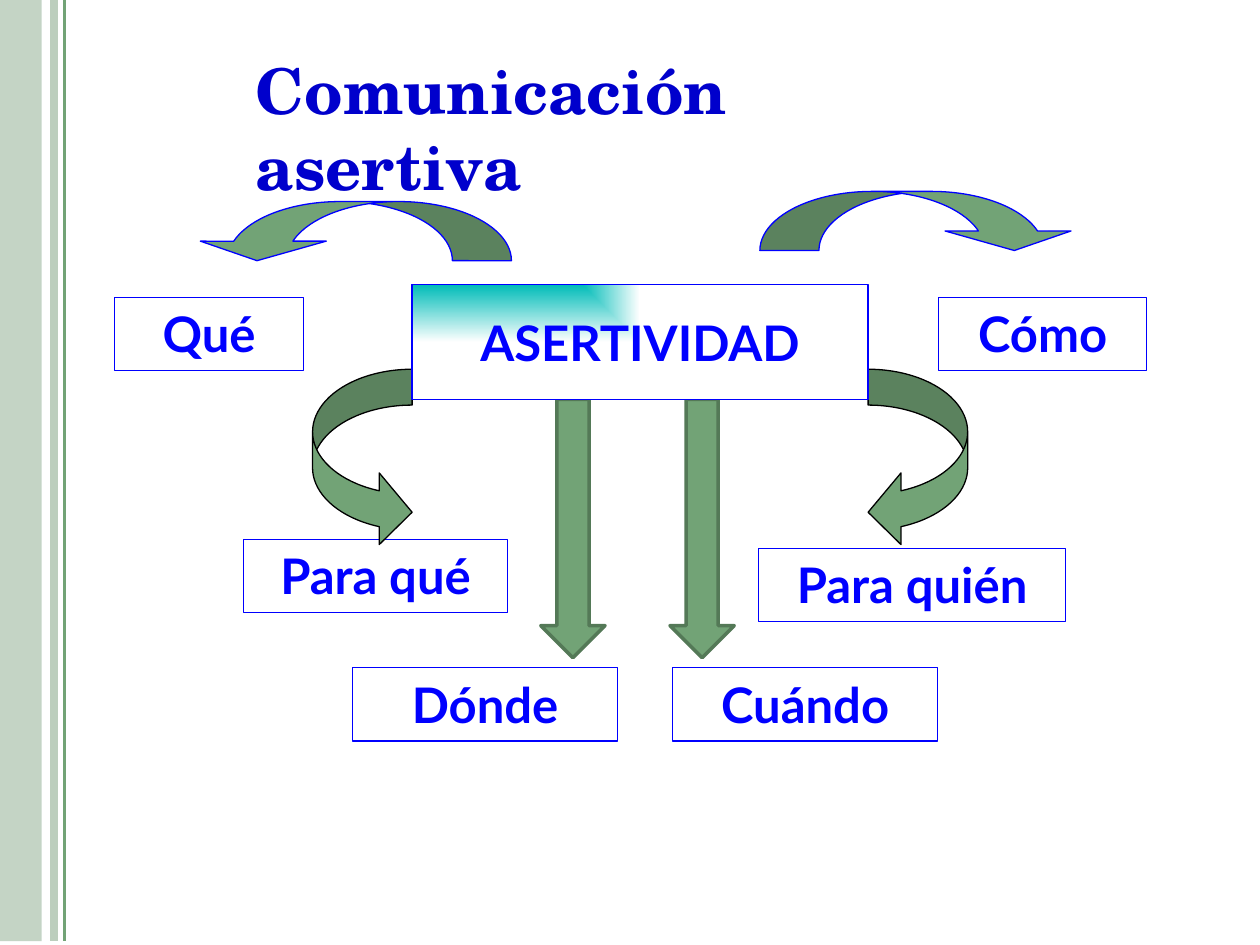
"""Build the slide on assertive communication and its six questions."""
from lxml.etree import SubElement
from pptx import Presentation
from pptx.dml.color import RGBColor
from pptx.enum.shapes import MSO_CONNECTOR, MSO_SHAPE as Preset
from pptx.enum.text import MSO_ANCHOR, MSO_AUTO_SIZE, PP_ALIGN as Align
from pptx.oxml import parse_xml
from pptx.oxml.ns import nsdecls, qn
from pptx.util import Pt

BLUE = RGBColor(0x00, 0x00, 0xFF)
TITLE_BLUE = RGBColor(0x00, 0x00, 0xCC)
GREEN = RGBColor(0x72, 0xA3, 0x76)
DARK_GREEN = RGBColor(0x54, 0x79, 0x57)
PALE_GREEN = RGBColor(0xBC, 0xCE, 0xBD)
BLACK = RGBColor(0x00, 0x00, 0x00)

TITLE = "Comunicación asertiva"
CENTRE = "ASERTIVIDAD"
BOX_HEIGHT = 41.8
STRIPE_TOP, STRIPE_HEIGHT = -2.16, 540
STRIPES = [(31, 4.5, PALE_GREEN), (36.7, 1.5, GREEN)]

ARROWS = {
    "over": dict(preset=Preset.CURVED_DOWN_ARROW, size=(181.4, 33.8), line=BLUE,
                 weight=0.75, adjustments=(1.06, 2.13, 0.33)),
    "side": dict(preset=Preset.CURVED_RIGHT_ARROW, size=(56.9, 102.2), line=BLACK,
                 weight=0.75, adjustments=(0.36, 0.72, 0.33)),
    "down": dict(preset=Preset.RIGHT_ARROW, size=(147.6, 36.7), line=DARK_GREEN,
                 weight=2, rotation=90),
}
QUESTIONS = [
    ("Qué", (65.5, 170, 108), "over", (110.9, 115.2), True),
    ("Cómo", (536.4, 170, 118.8), "over", (434.2, 109.4), False),
    ("Para qué", (139, 308.2, 151.2), "side", (178.6, 211), False),
    ("Para quién", (433.4, 313.4, 175.7), "side", (496.1, 211), True),
    ("Dónde", (201.6, 381.6, 151.2), "down", (253.6, 283.7), False),
    ("Cuándo", (384.5, 381.6, 151.2), "down", (327.4, 283.7), False),
]

presentation = Presentation()
presentation.slide_width, presentation.slide_height = Pt(720), Pt(540)
slide = presentation.slides.add_slide(presentation.slide_layouts[6])


def add_preset(preset, left, top, width, height, fill=None, line=None, weight=0.75):
    shape = slide.shapes.add_shape(preset, Pt(left), Pt(top), Pt(width), Pt(height))
    shape.shadow.inherit = False
    if fill is None:
        shape.fill.background()
    else:
        shape.fill.solid()
        shape.fill.fore_color.rgb = fill
    if line is None:
        shape.line.fill.background()
    else:
        shape.line.color.rgb = line
        shape.line.width = Pt(weight)
    return shape


def write(shape, text, size=28, font="Lato", color=BLUE, align=Align.CENTER,
          top=3.6, right=7.2, auto_size=MSO_AUTO_SIZE.SHAPE_TO_FIT_TEXT):
    frame = shape.text_frame
    frame.word_wrap = True
    frame.auto_size = auto_size
    frame.vertical_anchor = MSO_ANCHOR.TOP
    frame.margin_top, frame.margin_right = Pt(top), Pt(right)
    paragraph = frame.paragraphs[0]
    paragraph.text = text
    paragraph.alignment = align
    paragraph.font.size = Pt(size)
    paragraph.font.name = font
    paragraph.font.bold = True
    paragraph.font.color.rgb = color


def add_arrow(position, flipped, preset, size, line, weight, adjustments=(), rotation=0):
    arrow = add_preset(preset, *position, *size, GREEN, line, weight)
    for index, value in enumerate(adjustments):
        arrow.adjustments[index] = value
    arrow.rotation = rotation
    if flipped:
        arrow.element.spPr.find(qn("a:xfrm")).set("flipH", "1")


def add_stripes():
    for x, weight, color in STRIPES:
        stripe = slide.shapes.add_connector(
            MSO_CONNECTOR.STRAIGHT, Pt(x), Pt(STRIPE_TOP), Pt(x), Pt(STRIPE_TOP + STRIPE_HEIGHT))
        stripe.line.color.rgb = color
        stripe.line.width = Pt(weight)
        SubElement(stripe.element.spPr, qn("a:effectLst"))
    band = add_preset(Preset.RECTANGLE, 0, STRIPE_TOP, 23.8, STRIPE_HEIGHT, PALE_GREEN)
    color = band.element.spPr.find(qn("a:solidFill"))[0]
    SubElement(color, qn("a:alpha")).set("val", "87000")


def add_centre():
    centre = add_preset(Preset.RECTANGLE, 235.4, 162.7, 260.6, 65.5, line=BLUE)
    properties = centre.element.spPr
    gradient = parse_xml(
        f'<a:gradFill {nsdecls("a")} rotWithShape="1"><a:gsLst>'
        '<a:gs pos="0"><a:srgbClr val="00BCB8"/></a:gs>'
        '<a:gs pos="100000"><a:srgbClr val="FFFFFF"/></a:gs></a:gsLst>'
        '<a:path path="rect"><a:fillToRect r="100000" b="100000"/></a:path></a:gradFill>')
    properties.replace(properties.find(qn("a:noFill")), gradient)
    write(centre, CENTRE, top=15.6, auto_size=MSO_AUTO_SIZE.NONE)


add_stripes()
for label, (left, top, width), arrow_kind, position, flipped in QUESTIONS:
    box = add_preset(Preset.RECTANGLE, left, top, width, BOX_HEIGHT, line=BLUE)
    write(box, label)
    add_arrow(position, flipped, **ARROWS[arrow_kind])
add_centre()
title = slide.shapes.add_textbox(Pt(139), Pt(25.9), Pt(443.5), Pt(51.1))
write(title, TITLE, size=36, font="TeX Gyre Schola", color=TITLE_BLUE,
      align=Align.LEFT, right=36, auto_size=MSO_AUTO_SIZE.NONE)
presentation.save("out.pptx")
